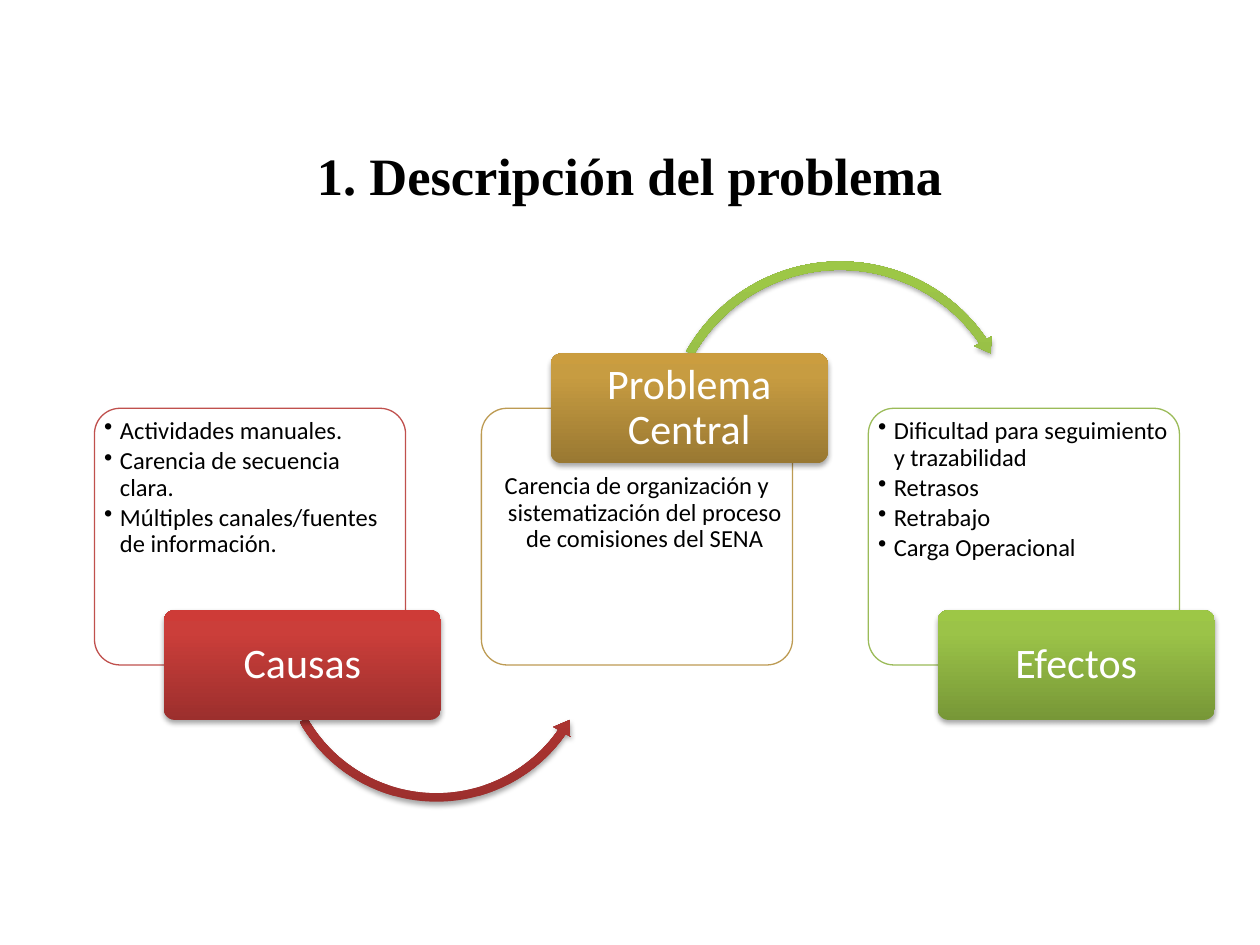
import copy
from dataclasses import dataclass

import pptx
import pptx.dml.color
import pptx.enum.shapes
import pptx.enum.text
import pptx.oxml
import pptx.oxml.ns
import pptx.util
from lxml import etree

Pt = pptx.util.Pt
RGB = pptx.dml.color.RGBColor.from_string
SHAPE = pptx.enum.shapes.MSO_SHAPE
ALIGN = pptx.enum.text.PP_ALIGN
ANCHOR = pptx.enum.text.MSO_ANCHOR
qn = pptx.oxml.ns.qn


@dataclass(frozen=True)
class Theme:
    title_font: str = "Times New Roman"
    body_font: str = "Calibri"
    title_size: float = 30
    label_size: float = 24
    body_size: float = 14
    dark: str = "000000"
    light: str = "FFFFFF"
    # Each accent: outline, then gradient from bottom to top
    red: tuple = ("C0504D", "9C2F2D", "CB3E3A", "CE3B37")
    gold: tuple = ("BD9B53", "997832", "C79C41", "CB9D3F")
    green: tuple = ("9BBB59", "779737", "9BC348", "9DC746")


THEME = Theme()
CARD_LEFT, CARD_TOP, CARD_STEP = 54, 233.3, 221.1
CARD_WIDTH, CARD_HEIGHT = 177.8, 146.7
LABEL_WIDTH, LABEL_HEIGHT, LABEL_OFFSET = 158.4, 62.8, 39.6
HANGING_INDENT = 9


def style_font(font, name, size, color, bold=False):
    font.name = name
    font.size = Pt(size)
    font.bold = bold
    font.color.rgb = RGB(color)


def add_shape(slide, kind, left, top, width, height, adjustments):
    shape = slide.shapes.add_shape(kind, Pt(left), Pt(top), Pt(width), Pt(height))
    shape.shadow.inherit = False
    for index, value in enumerate(adjustments):
        shape.adjustments[index] = value
    return shape


def apply_accent(shape, accent):
    """Fill with the accent gradient, drop the outline and add a soft shadow."""
    shape.line.fill.background()
    shape.fill.gradient()
    shape.fill.gradient_angle = 90
    properties = shape._element.spPr
    stop_list = properties.find(qn("a:gradFill")).find(qn("a:gsLst"))
    stop_list.append(copy.deepcopy(stop_list[-1]))
    for stop, position, color in zip(shape.fill.gradient_stops, (0, 0.8, 1), accent[1:]):
        stop.position = position
        stop.color.rgb = RGB(color)
    effects = properties.find(qn("a:effectLst"))
    shadow = etree.SubElement(effects, qn("a:outerShdw"), blurRad=str(Pt(3.1)),
                              dist=str(Pt(1.8)), dir="5400000", rotWithShape="0")
    color = etree.SubElement(shadow, qn("a:srgbClr"), val=THEME.dark)
    etree.SubElement(color, qn("a:alpha"), val="35000")


def set_insets(frame, horizontal, top, bottom):
    frame.word_wrap = True
    frame.margin_left = frame.margin_right = Pt(horizontal)
    frame.margin_top, frame.margin_bottom = Pt(top), Pt(bottom)


def add_title(slide, text):
    title = slide.shapes.title
    title.left, title.top, title.width, title.height = Pt(54), Pt(69), Pt(612), Pt(61.2)
    title.text_frame.text = text
    title.text_frame.vertical_anchor = ANCHOR.MIDDLE
    paragraph = title.text_frame.paragraphs[0]
    paragraph.alignment = ALIGN.CENTER
    style_font(paragraph.font, THEME.title_font, THEME.title_size, THEME.dark, bold=True)


def add_card(slide, left, lines, accent, label_on_top):
    card = add_shape(slide, SHAPE.ROUNDED_RECTANGLE, left, CARD_TOP,
                     CARD_WIDTH, CARD_HEIGHT, [0.1])
    card.fill.solid()
    card.fill.fore_color.rgb = RGB(THEME.light)
    color = card._element.spPr.find(qn("a:solidFill"))[0]
    etree.SubElement(color, qn("a:alpha"), val="90000")
    card.line.color.rgb = RGB(accent[0])
    card.line.width = Pt(0.75)

    frame = card.text_frame
    half_label = LABEL_HEIGHT / 2
    set_insets(frame, 1.3, 1.5 + half_label if label_on_top else 1.5,
               1.5 if label_on_top else 1.5 + half_label)
    frame.vertical_anchor = ANCHOR.TOP
    frame.text = "\n".join(lines)
    for paragraph in frame.paragraphs:
        paragraph.alignment = ALIGN.CENTER if label_on_top else ALIGN.LEFT
        paragraph.line_spacing = 0.9
        paragraph.space_after = Pt(2.1)
        properties = paragraph._p.get_or_add_pPr()
        properties.set("marL", str(Pt(HANGING_INDENT)))
        properties.set("indent", str(Pt(-HANGING_INDENT)))
        if not label_on_top:
            etree.SubElement(properties, qn("a:buChar"), char="•")
        style_font(paragraph.font, THEME.body_font, THEME.body_size, THEME.dark)


def add_label(slide, card_left, text, accent, label_on_top):
    """Add a heading centred on the top or bottom edge of its card."""
    edge = CARD_TOP if label_on_top else CARD_TOP + CARD_HEIGHT
    label = add_shape(slide, SHAPE.ROUNDED_RECTANGLE, card_left + LABEL_OFFSET,
                      edge - LABEL_HEIGHT / 2, LABEL_WIDTH, LABEL_HEIGHT, [0.1])
    apply_accent(label, accent)
    frame = label.text_frame
    set_insets(frame, 4, 2.2, 2.2)
    frame.vertical_anchor = ANCHOR.MIDDLE
    frame.text = text
    paragraph = frame.paragraphs[0]
    paragraph.alignment = ALIGN.CENTER
    paragraph.line_spacing = 0.9
    style_font(paragraph.font, THEME.body_font, THEME.label_size, THEME.light)


def add_curved_arrow(slide, kind, left, top, diameter, adjustments, accent):
    arrow = add_shape(slide, kind, left, top, diameter, diameter, adjustments)
    apply_accent(arrow, accent)


def main():
    presentation = pptx.Presentation()
    presentation.slide_width, presentation.slide_height = Pt(720), Pt(540)
    slide = presentation.slides.add_slide(presentation.slide_layouts[5])
    add_title(slide, "1. Descripción del problema")

    steps = [
        ("Causas", THEME.red,
         ["Actividades manuales.", "Carencia de secuencia clara.",
          "Múltiples canales/fuentes de información."],
         (SHAPE.LEFT_CIRCULAR_ARROW, 156.2, 275, 186.5,
          [0.026, 3.178, 20.933, 90.245, 0.031])),
        ("Problema Central", THEME.gold,
         ["Carencia de organización y sistematización del proceso de comisiones del SENA"],
         (SHAPE.CIRCULAR_ARROW, 375.8, 146.2, 208.8,
          [0.023, 2.813, 195.431, 125.755, 0.027])),
        ("Efectos", THEME.green,
         ["Dificultad para seguimiento y trazabilidad", "Retrasos", "Retrabajo",
          "Carga Operacional"],
         None),
    ]
    for index, (heading, accent, lines, arrow) in enumerate(steps):
        left = CARD_LEFT + index * CARD_STEP
        label_on_top = index % 2 == 1
        add_card(slide, left, lines, accent, label_on_top)
        if arrow:
            arrow_accent = THEME.green if label_on_top else accent
            add_curved_arrow(slide, *arrow, arrow_accent)
        add_label(slide, left, heading, accent, label_on_top)

    presentation.save("out.pptx")


if __name__ == "__main__":
    main()
